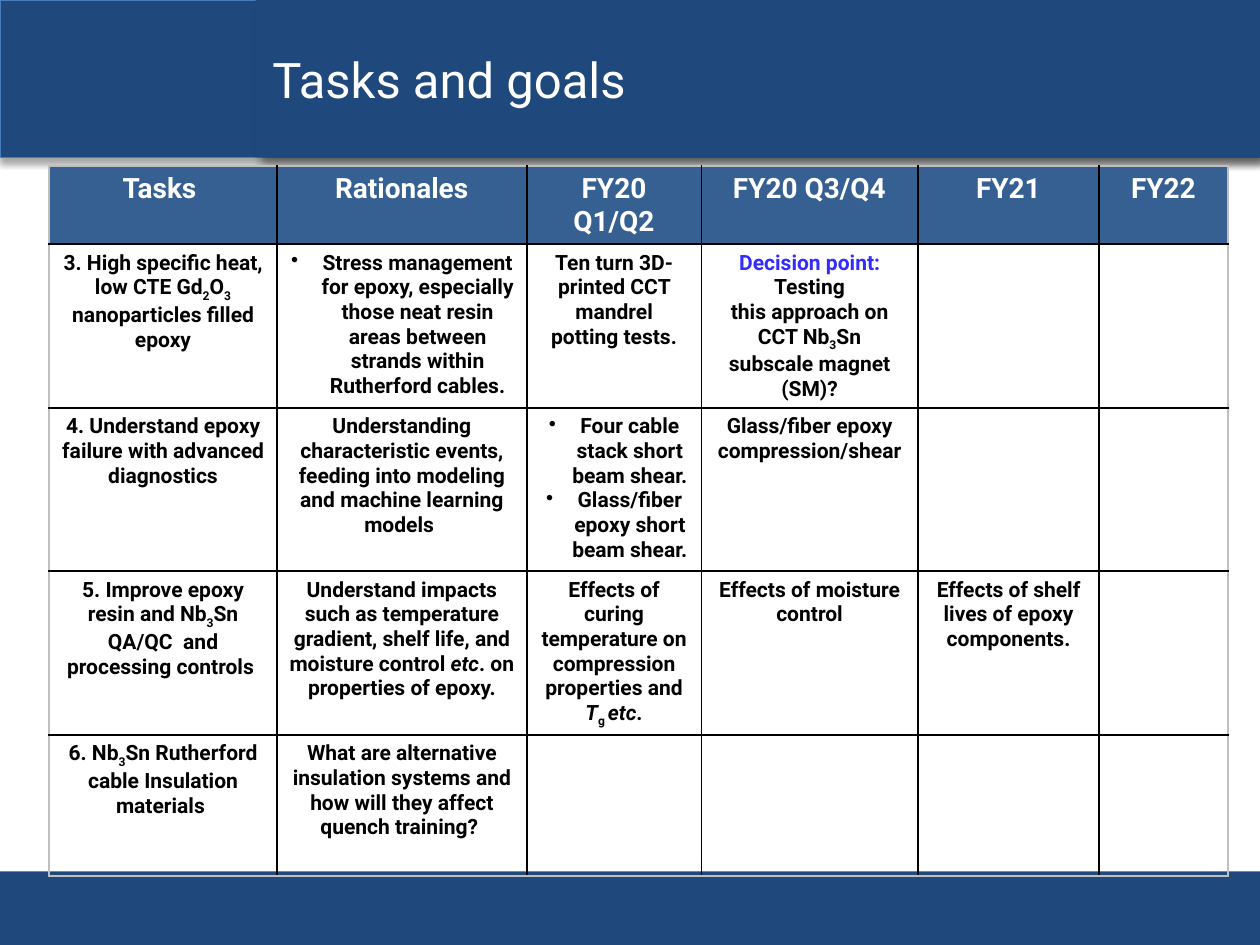
import dataclasses

import lxml.etree
import pptx
import pptx.dml.color
import pptx.enum.shapes
import pptx.enum.text
import pptx.oxml.ns
import pptx.util

Pt = pptx.util.Pt
qn = pptx.oxml.ns.qn


@dataclasses.dataclass(frozen=True)
class Theme:
    font: str = "Roboto"
    navy: str = "1F497D"
    edge: str = "4A7EBB"
    head: str = "376092"
    key: str = "322CFF"
    black: str = "000000"
    white: str = "FFFFFF"
    grey: str = "BFBFBF"
    title: float = 21
    label: float = 12
    body: float = 9


THEME = Theme()
WIDTH, HEIGHT, BAND = 540, 405, 67.5
COLS = [97.7, 107, 75, 92.6, 78, 54.9]
ROWS = [30, 70, 70, 63, 60.5]
BULLET = "• "
SUB3 = ("3", "sub")

# A cell is a list of paragraphs; a paragraph is a list of (text, style) parts
# or a plain string.
HEADS = ["Tasks ", "Rationales", "FY20 Q1/Q2", "FY20 Q3/Q4", "FY21", "FY22"]
TASKS = [
    [
        [["3. High specific heat, low CTE Gd", ("2", "sub"), "O", SUB3,
          " nanoparticles filled epoxy"]],
        [BULLET + "Stress management for epoxy, especially those neat resin "
         "areas between strands within Rutherford cables."],
        ["Ten turn 3D-printed CCT mandrel potting tests."],
        [[("Decision point: ", "key"), "Testing"],
         ["this approach on CCT Nb", SUB3, "Sn subscale magnet (SM)?"]],
    ],
    [
        ["4. Understand epoxy failure with advanced diagnostics"],
        ["Understanding characteristic events, feeding into modeling and "
         "machine learning models "],
        [BULLET + "Four cable stack short beam shear.",
         BULLET + "Glass/fiber epoxy short beam shear."],
        ["Glass/fiber epoxy compression/shear"],
    ],
    [
        [["5. Improve epoxy resin and Nb", SUB3,
          "Sn QA/QC  and processing controls "]],
        [["Understand impacts such as temperature gradient, shelf life, and "
          "moisture control ", ("etc", "it"), ". on properties of epoxy."]],
        [["Effects of curing temperature on compression properties and ",
          ("T", "it"), ("g ", "sub"), ("etc", "it"), "."]],
        ["Effects of moisture control"],
        ["Effects of shelf lives of epoxy components."],
    ],
    [
        [["6. Nb", SUB3, "Sn Rutherford cable Insulation materials "]],
        ["What are alternative insulation systems and how will they affect "
         "quench training? "],
    ],
]


def rgb(code):
    return pptx.dml.color.RGBColor.from_string(code)


def node(parent, tag, **attrs):
    child = lxml.etree.SubElement(parent, qn(tag))
    for name, value in attrs.items():
        child.set(name, str(value))
    return child


def style(run, size, color, bold=False):
    font = run.font
    font.name, font.size, font.bold = THEME.font, Pt(size), bold
    font.color.rgb = rgb(color)


def shade(shape, alpha, blur, dist, angle):
    """Give the shape an outer shadow; alpha in percent, angle in degrees."""
    shape.shadow.inherit = False
    effects = shape._element.spPr.find(qn("a:effectLst"))
    outer = node(effects, "a:outerShdw", blurRad=Pt(blur), dist=Pt(dist),
                 dir=angle * 60000, rotWithShape=0)
    color = node(outer, "a:srgbClr", val=THEME.black)
    node(color, "a:alpha", val=alpha * 1000)


def band(slide, top, height):
    """Add a navy bar across the slide."""
    bar = slide.shapes.add_shape(pptx.enum.shapes.MSO_SHAPE.RECTANGLE,
                                 0, Pt(top), Pt(WIDTH), Pt(height))
    bar.shadow.inherit = False
    bar.fill.solid()
    bar.fill.fore_color.rgb = rgb(THEME.navy)
    bar.line.fill.background()
    return bar


def title(slide, text, left):
    box = slide.shapes.title
    box.left, box.top = Pt(left), Pt(0)
    box.width, box.height = Pt(WIDTH - left), Pt(BAND)
    box.fill.solid()
    box.fill.fore_color.rgb = rgb(THEME.navy)
    shade(box, 43, 4, 3, 45)
    frame = box.text_frame
    frame.text = text
    frame.vertical_anchor = pptx.enum.text.MSO_ANCHOR.MIDDLE
    para = frame.paragraphs[0]
    para.alignment = pptx.enum.text.PP_ALIGN.LEFT
    style(para.runs[0], THEME.title, THEME.white)
    slide.shapes._spTree.append(box._element)  # in front of the bands


def border(cell, outer):
    """Draw all four sides, grey for the sides named in outer."""
    props = cell._tc.get_or_add_tcPr()
    for side in "LRTB":
        line = node(props, "a:ln" + side, w=Pt(1))
        fill = node(line, "a:solidFill")
        node(fill, "a:srgbClr",
             val=THEME.grey if side in outer else THEME.black)


def write(para, parts, size, color):
    para.alignment = pptx.enum.text.PP_ALIGN.CENTER
    if isinstance(parts, str):
        if parts.startswith(BULLET):
            parts = parts[len(BULLET):]
            props = para._p.get_or_add_pPr()
            props.set("marL", str(Pt(13.5)))
            props.set("indent", str(-Pt(13.5)))
            node(props, "a:buChar", char="•")
        parts = [parts]
    for part in parts:
        text, look = (part, "") if isinstance(part, str) else part
        run = para.add_run()
        run.text = text
        style(run, size, THEME.key if look == "key" else color, True)
        if look == "it":
            run.font.italic = True
        elif look == "sub":
            run.font._element.set("baseline", "-25000")


def fill(cell, paras, head, outer):
    cell.margin_left = cell.margin_right = Pt(5.4)
    cell.margin_top = cell.margin_bottom = Pt(2.7)
    border(cell, outer)
    if head:
        cell.fill.solid()
        cell.fill.fore_color.rgb = rgb(THEME.head)
        size, color = THEME.label, THEME.white
    else:
        cell.fill.background()
        size, color = THEME.body, THEME.black
    frame = cell.text_frame
    for i, parts in enumerate(paras):
        para = frame.add_paragraph() if i else frame.paragraphs[0]
        write(para, parts, size, color)


def grid(slide, left, top):
    """Add the table of tasks by quarter."""
    table = slide.shapes.add_table(len(ROWS), len(COLS), Pt(left), Pt(top),
                                   Pt(sum(COLS)), Pt(sum(ROWS))).table
    table.first_row = table.horz_banding = False
    for col, width in zip(table.columns, COLS):
        col.width = Pt(width)
    for row, height in zip(table.rows, ROWS):
        row.height = Pt(height)
    data = [[[text] for text in HEADS]] + TASKS
    for r, line in enumerate(data):
        for c in range(len(COLS)):
            ends = {"T": r == 0, "B": r == len(ROWS) - 1,
                    "L": c == 0, "R": c == len(COLS) - 1}
            outer = [side for side, on in ends.items() if on]
            paras = line[c] if c < len(line) else []
            fill(table.cell(r, c), paras, r == 0, outer)


def main():
    deck = pptx.Presentation()
    deck.slide_width, deck.slide_height = Pt(WIDTH), Pt(HEIGHT)
    slide = deck.slides.add_slide(deck.slide_layouts[5])
    band(slide, 373.5, HEIGHT - 373.5)
    top = band(slide, 0, BAND)
    top.line.color.rgb = rgb(THEME.edge)
    top.line.width = Pt(0.75)
    shade(top, 35, 3, 1.8, 90)
    title(slide, "Tasks and goals", 109.5)
    grid(slide, 21, 71.2)
    deck.save("out.pptx")


if __name__ == "__main__":
    main()
